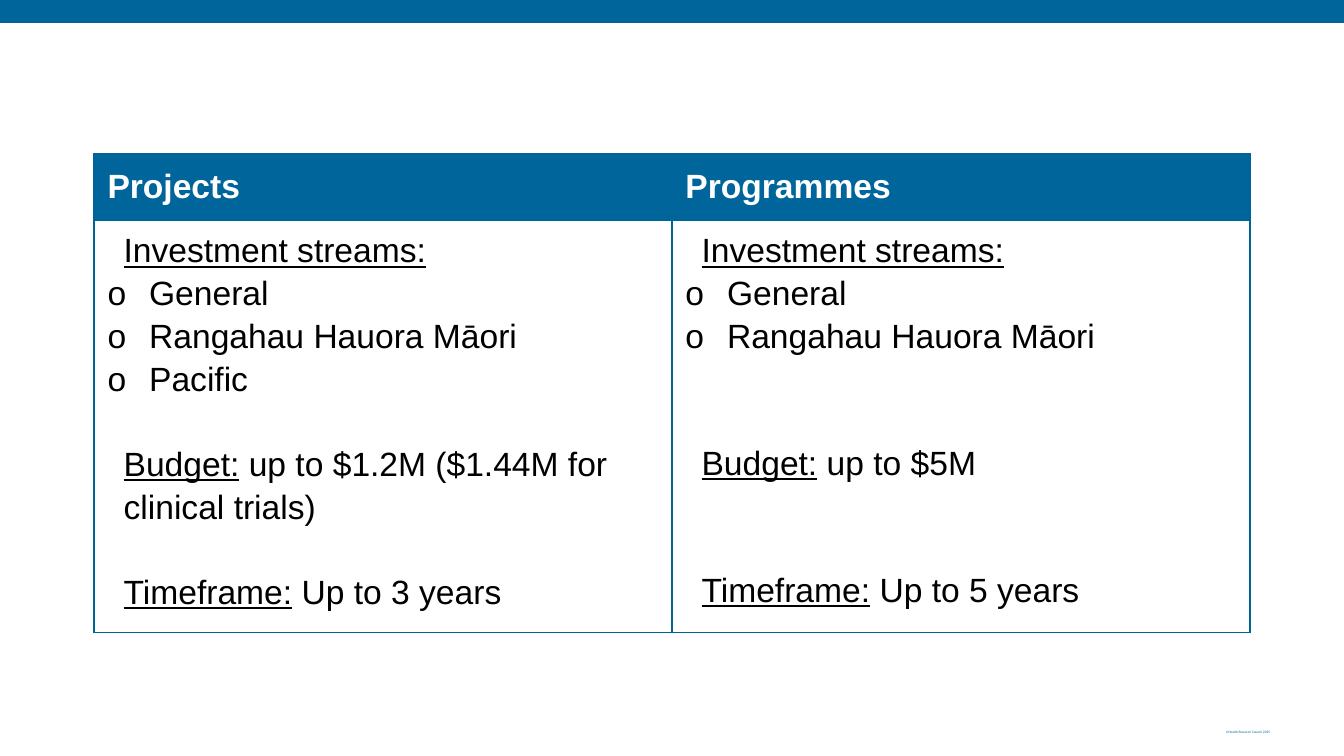
from lxml import etree
from pptx import Presentation
from pptx.dml.color import RGBColor
from pptx.enum.shapes import MSO_SHAPE
from pptx.enum.text import MSO_ANCHOR, PP_ALIGN
from pptx.oxml.ns import qn
from pptx.util import Inches, Pt

RECT = MSO_SHAPE.RECTANGLE
MIDDLE = MSO_ANCHOR.MIDDLE
RIGHT = PP_ALIGN.RIGHT

BLUE = RGBColor(0x00, 0x65, 0x9B)
EDGE = RGBColor(0x00, 0x63, 0x98)
WHITE = RGBColor(0xFF, 0xFF, 0xFF)
BLACK = RGBColor(0x00, 0x00, 0x00)

HEAD = {"name": "Arial", "size": Pt(18), "bold": True}
BODY = {"name": "Arial", "size": Pt(18), "bold": False}
NOTE = {"name": "Lato", "size": Pt(3)}
LINE = 22.5  # height of one skipped line in points

# Heading, streams, and label, value and lines of space before
COLS = [
    ("Projects", ["General", "Rangahau Hauora Māori", "Pacific"],
     [("Budget:", " up to $1.2M ($1.44M for clinical trials)", 1),
      ("Timeframe:", " Up to 3 years", 1)]),
    ("Programmes", ["General", "Rangahau Hauora Māori"],
     [("Budget:", " up to $5M", 2),
      ("Timeframe:", " Up to 5 years", 2)]),
]


def add_run(para, text, style, color, under=False):
    run = para.add_run()
    run.text = text
    for key, value in style.items():
        setattr(run.font, key, value)
    run.font.underline = under
    run.font.color.rgb = color
    return run


def add_sub(parent, tag, **attrs):
    return etree.SubElement(parent, qn(tag), attrs)


def set_edges(cell, col):
    """Draw thin outer borders and a thicker line between the columns."""
    props = cell._tc.get_or_add_tcPr()
    inner = "a:lnR" if col == 0 else "a:lnL"
    for spot, tag in enumerate(("a:lnL", "a:lnR", "a:lnT", "a:lnB")):
        color, width = (BLUE, Pt(1)) if tag == inner else (EDGE, Pt(0.75))
        line = etree.Element(qn(tag), w=str(int(width)))
        fill = add_sub(line, "a:solidFill")
        add_sub(fill, "a:srgbClr", val=str(color))
        props.insert(spot, line)


def next_para(frame, left, hang=0, gap=0):
    """Return a fresh paragraph, using the empty first one if it is free."""
    para = frame.paragraphs[0]
    if para.runs:
        para = frame.add_paragraph()
    para.line_spacing = 1.14
    if gap:
        para.space_before = Pt(gap * LINE)
    props = para._p.get_or_add_pPr()
    props.set("marL", str(Inches(left)))
    props.set("indent", str(-Inches(hang)))
    if hang:
        color = add_sub(props, "a:buClr")
        add_sub(color, "a:srgbClr", val=str(BLACK))
        add_sub(props, "a:buFont", typeface="Arial")
        add_sub(props, "a:buChar", char="o")
    return para


def fill_body(frame, streams, facts):
    add_run(next_para(frame, 0.12), "Investment streams:", BODY, BLACK, True)
    for name in streams:
        add_run(next_para(frame, 0.31, hang=0.31), name, BODY, BLACK)
    for label, value, gap in facts:
        para = next_para(frame, 0.12, gap=gap)
        add_run(para, label, BODY, BLACK, True)
        add_run(para, value, BODY, BLACK)


def add_grid(slide, x, y, w, h):
    head = 0.5
    table = slide.shapes.add_table(
        2, len(COLS), Inches(x), Inches(y), Inches(w), Inches(h)).table
    table.horz_banding = False
    table.rows[0].height = Inches(head)
    table.rows[1].height = Inches(h - head)
    for col, (title, streams, facts) in enumerate(COLS):
        table.columns[col].width = Inches(w / len(COLS))
        top, body = table.cell(0, col), table.cell(1, col)
        top.fill.solid()
        top.fill.fore_color.rgb = BLUE
        top.vertical_anchor = MIDDLE
        add_run(top.text_frame.paragraphs[0], title, HEAD, WHITE)
        body.fill.background()
        body.margin_bottom = 0
        fill_body(body.text_frame, streams, facts)
        for cell in (top, body):
            set_edges(cell, col)


def add_band(slide, x, y, w, h):
    band = slide.shapes.add_shape(
        RECT, Inches(x), Inches(y), Inches(w), Inches(h))
    band.shadow.inherit = False
    band.fill.solid()
    band.fill.fore_color.rgb = BLUE
    band.line.fill.background()


def add_note(slide, x, y, w, h):
    box = slide.shapes.add_textbox(
        Inches(x), Inches(y), Inches(w), Inches(h))
    frame = box.text_frame
    frame.word_wrap = True
    frame.vertical_anchor = MIDDLE
    for side in ("left", "top", "right", "bottom"):
        setattr(frame, "margin_" + side, Inches(0.1))
    para = frame.paragraphs[0]
    para.alignment = RIGHT
    run = add_run(para, "©Health Research Council 2025", NOTE, BLUE)
    run.font._element.set("baseline", "-25000")


def main():
    deck = Presentation()
    deck.slide_width = Inches(10)
    deck.slide_height = Inches(10 * 9 / 16)
    slide = deck.slides.add_slide(deck.slide_layouts[6])
    # Copyright line, top band, comparison table
    add_note(slide, 7.28, 5.31, 2.27, 0.25)
    add_band(slide, -0.03, -0.01, 10.04, 0.18)
    add_grid(slide, 0.7, 1.14, 8.6, 3.5)
    deck.save("out.pptx")


if __name__ == "__main__":
    main()
